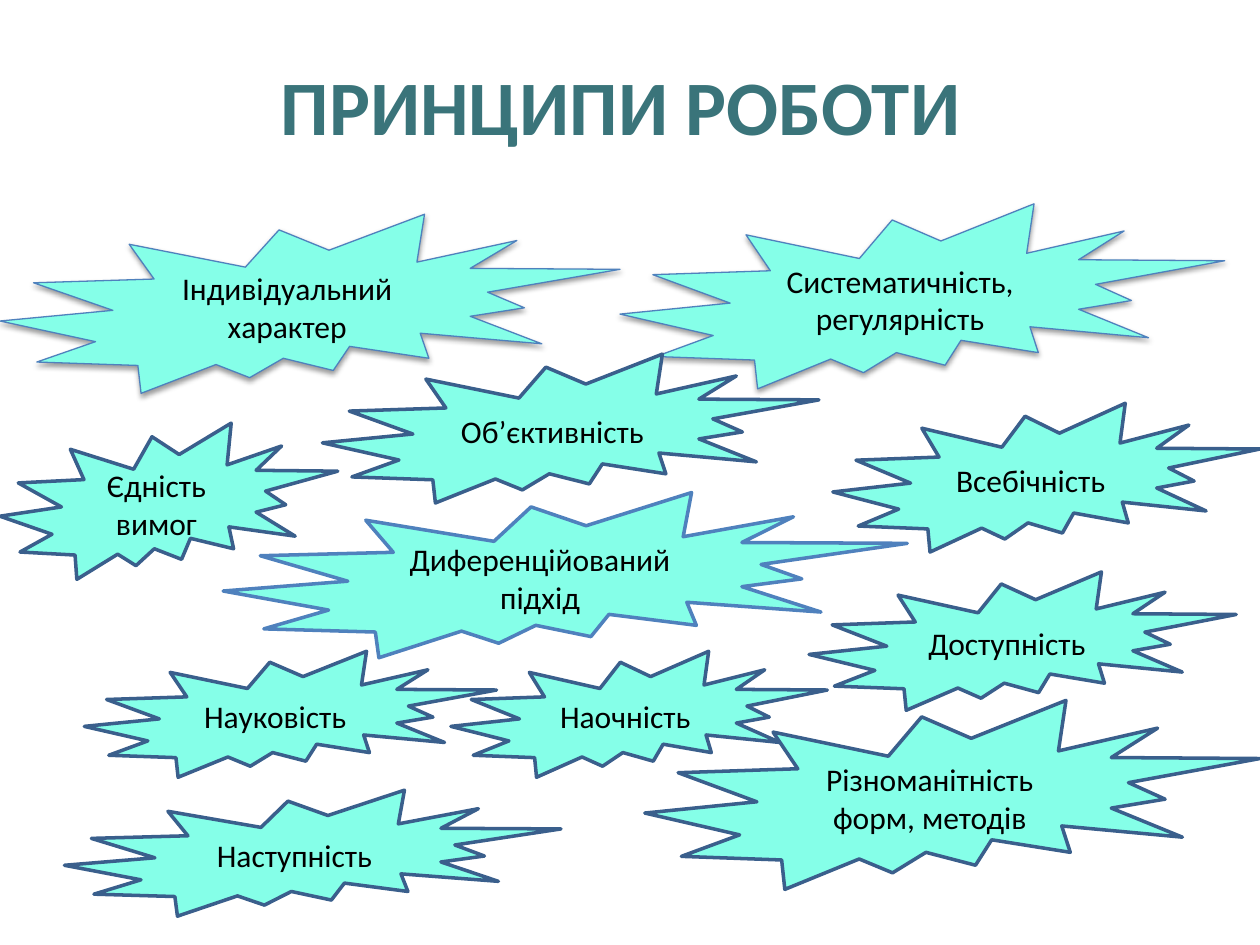
"""Build the slide of working principles as a field of star bursts."""
from lxml import etree
from pptx import Presentation
from pptx import util as u
from pptx.dml.color import RGBColor
from pptx.enum import shapes, text
from pptx.oxml import ns

HUES = {"title": "3A747A", "fill": "85FFE8", "dark": "3A5F8C",
        "light": "4F81BD", "text": "000000", "shade": "000000"}
BURSTS = [
    ("Індивідуальний характер", 0, 4.32, 12.5, 3.61, "light", 0.75, True),
    ("Єдність вимог", 0, 8.53, 6.81, 3.15, "dark", 2, False),
    ("Систематичність, регулярність", 12.5, 4.11, 12.19, 3.73, "light", 0.75, True),
    ("Всебічність", 16.79, 8.13, 8.61, 3, "dark", 2, False),
    ("Різноманітність форм, методів", 13, 14.12, 12.4, 3.81, "dark", 2, False),
    ("Об’єктивність", 6.5, 7.14, 10.01, 3, "dark", 2, False),
    ("Диференційований підхід", 4.5, 9.93, 13.79, 3.33, "light", 2, False),
    ("Наочність", 9.09, 13.13, 7.59, 2.54, "dark", 2, False),
    ("Доступність", 16.31, 11.53, 8.61, 2.79, "dark", 2, False),
    ("Наступність", 1.3, 15.93, 10.01, 2.54, "dark", 2, False),
    ("Науковість", 1.7, 13.13, 8.31, 2.54, "dark", 2, False),
]


def write(shape, words, hue, style):
    """Put centred words in a shape and apply the font style."""
    frame = shape.text_frame
    frame.text = words
    frame.word_wrap = True
    frame.vertical_anchor = text.MSO_ANCHOR.MIDDLE
    line = frame.paragraphs[0]
    line.alignment = text.PP_ALIGN.CENTER
    font = line.runs[0].font
    for name, value in style.items():
        setattr(font, name, value)
    font.color.rgb = RGBColor.from_string(HUES[hue])


def shade(shape):
    """Add a soft shadow straight below a shape."""
    list_ = shape._element.spPr.find(ns.qn("a:effectLst"))
    outer = etree.SubElement(list_, ns.qn("a:outerShdw"), blurRad=str(u.Pt(3.1)),
                             dist=str(u.Pt(1.6)), dir="5400000", rotWithShape="0")
    tint = etree.SubElement(outer, ns.qn("a:srgbClr"), val=HUES["shade"])
    etree.SubElement(tint, ns.qn("a:alpha"), val="38000")


deck = Presentation()
deck.slide_width, deck.slide_height = u.Cm(25.4), u.Cm(19.05)
slide = deck.slides.add_slide(deck.slide_layouts[5])

title = slide.shapes.title
place = {"left": 1.09, "top": 0.53, "width": 22.86, "height": 3.18}
for name, value in place.items():
    setattr(title, name, u.Cm(value))
write(title, "ПРИНЦИПИ РОБОТИ", "title",
      {"name": "Calibri", "size": u.Pt(44), "bold": True})

for words, left, top, width, height, edge, weight, soft in BURSTS:
    box = [u.Cm(side) for side in (left, top, width, height)]
    burst = slide.shapes.add_shape(shapes.MSO_SHAPE.EXPLOSION2, *box)
    burst.shadow.inherit = False
    burst.fill.solid()
    burst.fill.fore_color.rgb = RGBColor.from_string(HUES["fill"])
    burst.line.color.rgb = RGBColor.from_string(HUES[edge])
    burst.line.width = u.Pt(weight)
    if soft:
        shade(burst)
    write(burst, words, "text",
          {"name": "Calibri", "size": u.Pt(18), "bold": False})

deck.save("out.pptx")
